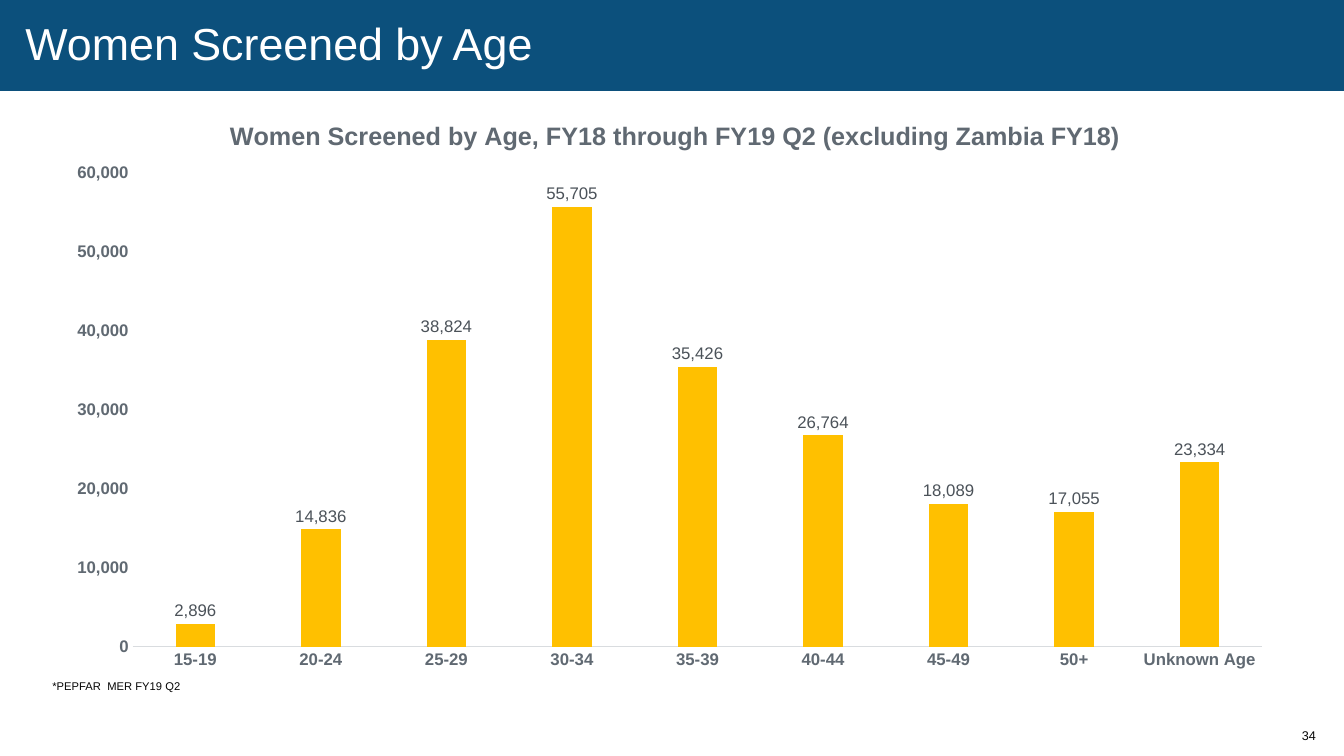
from lxml.etree import SubElement
from pptx import Presentation
from pptx.chart.data import CategoryChartData
from pptx.dml.color import RGBColor
from pptx.enum.chart import XL_CHART_TYPE, XL_LABEL_POSITION, XL_TICK_MARK
from pptx.enum.shapes import MSO_SHAPE
from pptx.enum.text import MSO_ANCHOR, PP_ALIGN
from pptx.oxml import parse_xml
from pptx.oxml.ns import nsdecls, qn
from pptx.util import Cm, Pt

COLORS = {
    "banner": "0C507C",
    "white": "FFFFFF",
    "ink": "060606",
    "axis_text": "606972",
    "axis_line": "D9DCDF",
    "label": "4B5259",
    "chart_text": "16181A",
    "bar": "FFC000",
}
SCREENED = {
    "15-19": 2896,
    "20-24": 14836,
    "25-29": 38824,
    "30-34": 55705,
    "35-39": 35426,
    "40-44": 26764,
    "45-49": 18089,
    "50+": 17055,
    "Unknown Age": 23334,
}


def color(name):
    """Return the named colour."""
    return RGBColor.from_string(COLORS[name])


def style_font(font, size, name, bold=False):
    """Set face, size, weight and colour of a font."""
    font.name = "Arial"
    font.size = Pt(size)
    font.bold = bold
    font.color.rgb = color(name)


def add_text(page, box, text, size, name, align=PP_ALIGN.LEFT, anchor=MSO_ANCHOR.TOP):
    """Place one line of text in a box without insets."""
    frame = page.shapes.add_textbox(*box).text_frame
    frame.word_wrap = True
    frame.vertical_anchor = anchor
    frame.margin_left = frame.margin_right = frame.margin_top = frame.margin_bottom = 0
    para = frame.paragraphs[0]
    para.text = text
    para.alignment = align
    para.line_spacing = 0.9
    style_font(para.font, size, name)


def add_banner(page, left, top, width, height):
    """Draw the title band and its heading."""
    band = page.shapes.add_shape(MSO_SHAPE.RECTANGLE, left, top, width, height)
    band.shadow.inherit = False
    band.fill.solid()
    band.fill.fore_color.rgb = color("banner")
    band.line.fill.background()
    heading = (left + Cm(0.64), top + Cm(0.56), width - Cm(1.38), Cm(1.27))
    add_text(page, heading, "Women Screened by Age", 32, "white")


def set_layout(parent, **fractions):
    """Fix the place of a chart part as fractions of the chart."""
    layout = parent.find(qn("c:layout"))
    if layout is None:
        layout = parse_xml(f"<c:layout {nsdecls('c')}/>")
        parent.insert(0, layout)
    manual = SubElement(layout, qn("c:manualLayout"))
    if "w" in fractions:
        SubElement(manual, qn("c:layoutTarget")).set("val", "inner")
    for side in ("x", "y"):
        SubElement(manual, qn(f"c:{side}Mode")).set("val", "edge")
    for side, share in fractions.items():
        SubElement(manual, qn(f"c:{side}")).set("val", str(share))


def style_axis(axis):
    """Give an axis its text style and remove ticks and gridlines."""
    axis.major_tick_mark = axis.minor_tick_mark = XL_TICK_MARK.NONE
    axis.has_major_gridlines = False
    style_font(axis.tick_labels.font, 12, "axis_text", True)


def add_age_chart(page, left, top, width, height):
    """Draw the column chart of women screened per age group."""
    chart_data = CategoryChartData(number_format="#,##0")
    chart_data.categories = list(SCREENED)
    chart_data.add_series("Series 1", list(SCREENED.values()))
    chart = page.shapes.add_chart(
        XL_CHART_TYPE.COLUMN_CLUSTERED, left, top, width, height, chart_data
    ).chart
    style_font(chart.font, 10, "chart_text")
    chart.has_legend = False

    chart.has_title = True
    para = chart.chart_title.text_frame.paragraphs[0]
    para.text = "Women Screened by Age, FY18 through FY19 Q2 (excluding Zambia FY18)"
    style_font(para.font, 18, "axis_text", True)

    style_axis(chart.category_axis)
    chart.category_axis.format.line.color.rgb = color("axis_line")
    chart.category_axis.format.line.width = Pt(0.75)
    style_axis(chart.value_axis)
    chart.value_axis.format.line.fill.background()
    chart.value_axis.minimum_scale = 0
    chart.value_axis.maximum_scale = 60000
    chart.value_axis.major_unit = 10000
    chart.value_axis.tick_labels.number_format = "#,##0"
    chart.value_axis.tick_labels.number_format_is_linked = False

    plot = chart.plots[0]
    plot.gap_width = 219
    plot.overlap = -27
    plot.vary_by_categories = False
    bars = plot.series[0]
    bars.format.fill.solid()
    bars.format.fill.fore_color.rgb = color("bar")
    labels = bars.data_labels
    labels.show_value = True
    labels.position = XL_LABEL_POSITION.OUTSIDE_END
    labels.number_format = "#,##0"
    labels.number_format_is_linked = False
    style_font(labels.font, 12, "label")

    frame = chart.element.find(qn("c:chart")) if hasattr(chart, "element") else chart._chartSpace.chart
    set_layout(frame.find(qn("c:title")), x=0.14, y=0.04)
    set_layout(frame.find(qn("c:plotArea")), x=0.065, y=0.138, w=0.915, h=0.805)


def add_footer(page, left, top, width):
    """Place the source note and the page number."""
    add_text(page, (left + Cm(1.32), top, Cm(21.49), Cm(0.99)), "*PEPFAR  MER FY19 Q2", 8, "ink")
    number = (left + width - Cm(2.33), top + Cm(0.89), Cm(1.62), Cm(1.02))
    add_text(page, number, "34", 9, "ink", PP_ALIGN.RIGHT, MSO_ANCHOR.MIDDLE)


def main():
    """Build and save the slide."""
    deck = Presentation()
    deck.slide_width, deck.slide_height = Cm(33.87), Cm(19.05)
    page = deck.slides.add_slide(deck.slide_layouts[6])
    add_banner(page, 0, 0, deck.slide_width, Cm(2.29))
    add_age_chart(page, Cm(1.32), Cm(2.31), Cm(31.12), Cm(14.83))
    add_footer(page, 0, Cm(17.15), deck.slide_width)
    deck.save("out.pptx")


if __name__ == "__main__":
    main()
